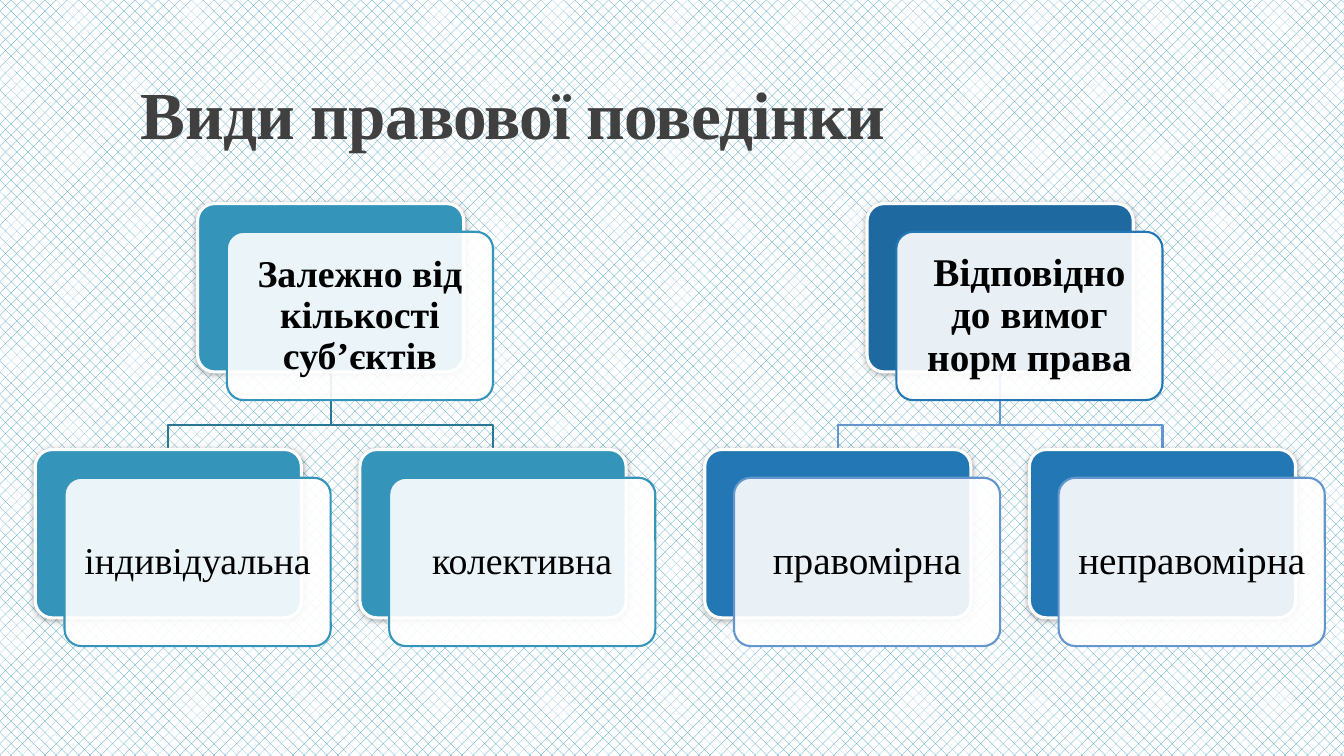
from lxml import etree
from pptx import Presentation
from pptx import util as u
from pptx.dml.color import RGBColor
from pptx.enum import dml, shapes, text
from pptx.oxml import ns

# Content
TITLE = "Види правової поведінки"
TEAL = RGBColor(0x34, 0x94, 0xBA)
DARK_TEAL = RGBColor(0x2A, 0x77, 0x95)
NAVY = RGBColor(0x1E, 0x69, 0x9F)
BLUE = RGBColor(0x22, 0x77, 0xB4)
LIGHT_BLUE = RGBColor(0x62, 0x96, 0xCD)
WHITE = RGBColor(0xFF, 0xFF, 0xFF)
BLACK = RGBColor(0, 0, 0)
GREY = RGBColor(0x40, 0x40, 0x40)
FONT = "Times New Roman"

TREES = [
    {"left": 1.96, "size": 27, "inset": 0.11, "branch": DARK_TEAL,
     "root": "Залежно від кількості суб’єктів", "root_colors": (TEAL, TEAL),
     "leaves": ["індивідуальна", "колективна"], "leaf_colors": (TEAL, TEAL)},
    {"left": 8.6, "size": 28, "inset": 0.12, "branch": LIGHT_BLUE,
     "root": "Відповідно до вимог норм права", "root_colors": (NAVY, BLUE),
     "leaves": ["правомірна", "неправомірна"], "leaf_colors": (BLUE, LIGHT_BLUE)},
]

# Layout in inches
CARD_W, CARD_H = 2.64, 1.67
SHIFT_X, SHIFT_Y = 0.29, 0.28
ROOT_TOP, LEAF_TOP = 2.02, 4.46
BEND_Y = 4.22
LEAF_STEP = 3.22


def add_span(para, words, size, color, bold):
    span = para.add_run()
    span.text = words
    span.font.name = FONT
    span.font.size = u.Pt(size)
    span.font.bold = bold
    span.font.color.rgb = color
    return span


def add_panel(page, left, top, fill, line, width):
    panel = page.shapes.add_shape(
        shapes.MSO_SHAPE.ROUNDED_RECTANGLE, u.Inches(left), u.Inches(top),
        u.Inches(CARD_W), u.Inches(CARD_H))
    panel.adjustments[0] = 0.1
    panel.shadow.inherit = False
    panel.fill.solid()
    panel.fill.fore_color.rgb = fill
    panel.line.color.rgb = line
    panel.line.width = u.Pt(width)
    return panel


def add_shadow(panel):
    effects = panel._element.spPr.find(ns.qn("a:effectLst"))
    shadow = etree.SubElement(effects, ns.qn("a:outerShdw"), blurRad=str(u.Pt(5)),
                              dist=str(u.Pt(1)), dir="5400000", rotWithShape="0")
    color = etree.SubElement(shadow, ns.qn("a:srgbClr"), val="000000")
    etree.SubElement(color, ns.qn("a:alpha"), val="32000")


def add_card(page, left, top, words, colors, tree, bold=False):
    back_color, edge_color = colors
    add_shadow(add_panel(page, left, top, back_color, WHITE, 2.25))

    # Translucent front panel holds the words
    front = add_panel(page, left + SHIFT_X, top + SHIFT_Y, WHITE, edge_color, 1.5)
    color = front._element.spPr.find(ns.qn("a:solidFill"))[0]
    etree.SubElement(color, ns.qn("a:alpha"), val="90000")
    frame = front.text_frame
    frame.word_wrap = True
    frame.vertical_anchor = text.MSO_ANCHOR.MIDDLE
    frame.margin_left = frame.margin_right = u.Inches(tree["inset"])
    frame.margin_top = frame.margin_bottom = u.Inches(tree["inset"])
    para = frame.paragraphs[0]
    para.alignment = text.PP_ALIGN.CENTER
    para.line_spacing = 0.9
    add_span(para, words, tree["size"], BLACK, bold)


def add_branch(page, root_x, leaf_x, color):
    points = [(root_x, ROOT_TOP + CARD_H), (root_x, BEND_Y),
              (leaf_x, BEND_Y), (leaf_x, LEAF_TOP)]
    corners = [(u.Inches(x), u.Inches(y)) for x, y in points]
    builder = page.shapes.build_freeform(*corners[0])
    builder.add_line_segments(corners[1:], close=False)
    branch = builder.convert_to_shape()
    branch.shadow.inherit = False
    branch.fill.background()
    branch.line.color.rgb = color
    branch.line.width = u.Pt(1.5)


def add_tree(page, tree):
    left = tree["left"]
    leaf_lefts = [left - LEAF_STEP / 2, left + LEAF_STEP / 2]
    for leaf_left in reversed(leaf_lefts):
        add_branch(page, left + CARD_W / 2, leaf_left + CARD_W / 2, tree["branch"])
    add_card(page, left, ROOT_TOP, tree["root"], tree["root_colors"], tree, bold=True)
    for leaf_left, words in zip(leaf_lefts, tree["leaves"]):
        add_card(page, leaf_left, LEAF_TOP, words, tree["leaf_colors"], tree)


def add_title(page):
    box = page.shapes.add_textbox(u.Inches(1.3), u.Inches(0.5), u.Inches(11), u.Inches(1.07))
    box.text_frame.word_wrap = True
    box.text_frame.vertical_anchor = text.MSO_ANCHOR.BOTTOM
    para = box.text_frame.paragraphs[0]
    para.line_spacing = 0.85
    span = add_span(para, TITLE, 48, GREY, True)
    span.font._element.set("spc", "-50")


def main():
    deck = Presentation()
    deck.slide_width, deck.slide_height = u.Inches(13.33), u.Inches(7.5)
    page = deck.slides.add_slide(deck.slide_layouts[6])

    # Patterned background
    fill = page.background.fill
    fill.patterned()
    fill.pattern = dml.MSO_PATTERN.PERCENT_25
    fill.fore_color.rgb = TEAL
    fill.back_color.rgb = WHITE

    add_title(page)
    for tree in TREES:
        add_tree(page, tree)
    deck.save("out.pptx")


if __name__ == "__main__":
    main()
